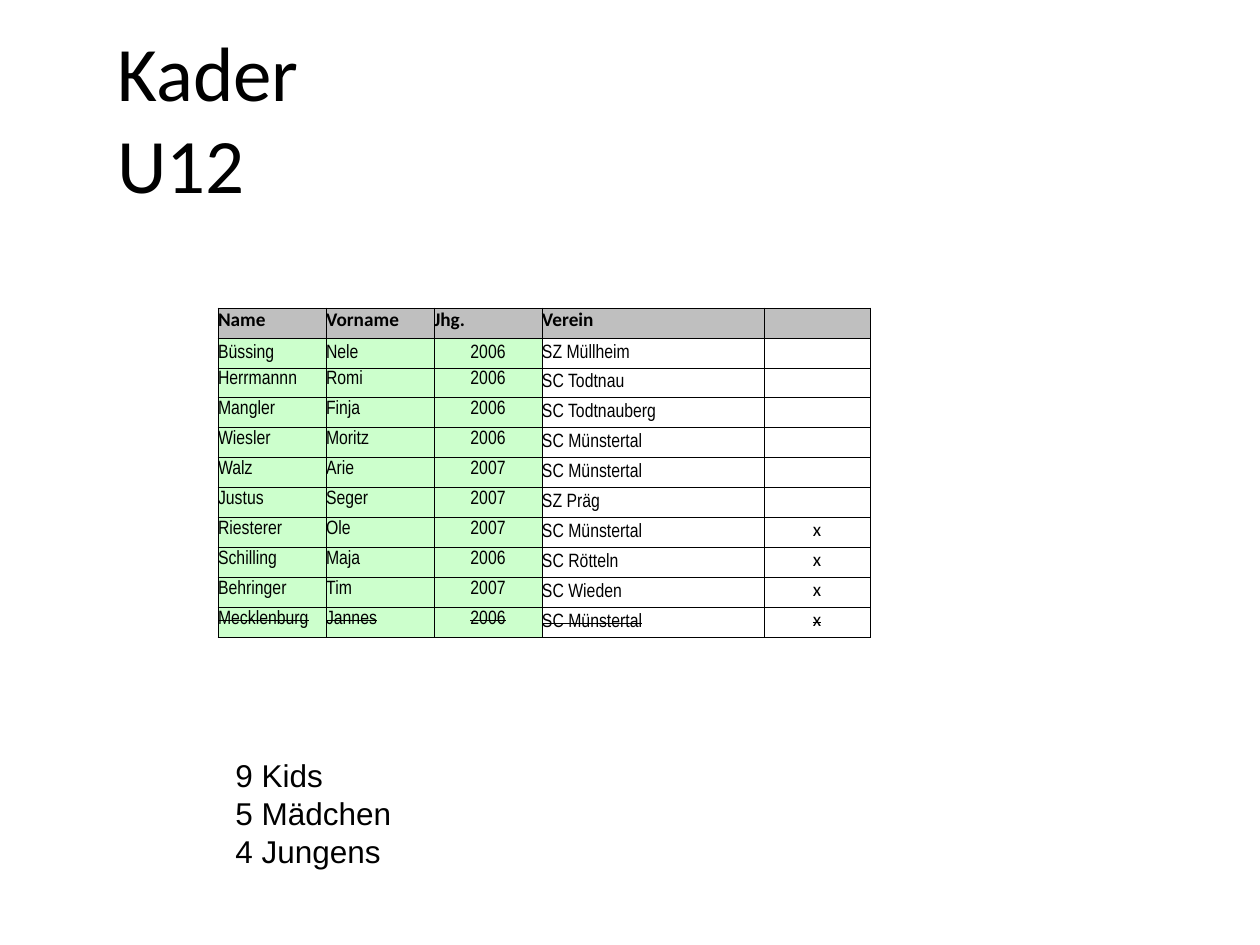
from lxml.etree import SubElement
from pptx import Presentation
from pptx.dml.color import RGBColor
from pptx.enum.text import MSO_ANCHOR, MSO_AUTO_SIZE, PP_ALIGN
from pptx.oxml.ns import qn
from pptx.util import Pt

SCALE = 914400 / 126
COLORS = {"text": "000000", "head": "BFBFBF", "mark": "CCFFCC", "plain": "FFFFFF"}

HEAD = ("Name", "Vorname", "Jhg.", "Verein", "")
SQUAD = [
    ("Büssing", "Nele", "2006", "SZ Müllheim", ""),
    ("Herrmannn", "Romi", "2006", "SC Todtnau", ""),
    ("Mangler", "Finja", "2006", "SC Todtnauberg", ""),
    ("Wiesler", "Moritz", "2006", "SC Münstertal", ""),
    ("Walz", "Arie", "2007", "SC Münstertal", ""),
    ("Justus", "Seger", "2007", "SZ Präg", ""),
    ("Riesterer", "Ole", "2007", "SC Münstertal", "x"),
    ("Schilling", "Maja", "2006", "SC Rötteln", "x"),
    ("Behringer", "Tim", "2007", "SC Wieden", "x"),
    ("Mecklenburg", "Jannes", "2006", "SC Münstertal", "x"),
]
WIDTHS = (108, 108, 108, 222, 106)
ROW = 30


def px(n):
    return round(n * SCALE)


def color(key):
    return RGBColor.from_string(COLORS[key])


class Deck:
    def __init__(self):
        self.prs = Presentation()
        self.prs.slide_width, self.prs.slide_height = px(1260), px(945)
        self.slide = self.prs.slides.add_slide(self.prs.slide_layouts[5])

    def style(self, para, size, face, bold=False, align=PP_ALIGN.LEFT):
        para.alignment = align
        font = para.font
        font.size, font.name, font.bold = Pt(size), face, bold
        font.color.rgb = color("text")

    def title(self, lines, x, y, w, h):
        shape = self.slide.shapes.title
        shape.left, shape.top, shape.width, shape.height = map(px, (x, y, w, h))
        frame = shape.text_frame
        frame.auto_size = MSO_AUTO_SIZE.NONE
        frame.vertical_anchor = MSO_ANCHOR.MIDDLE
        para = frame.paragraphs[0]
        for i, line in enumerate(lines):
            if i:
                para.add_line_break()
            para.add_run().text = line
        self.style(para, 44, "Calibri")

    def text(self, lines, x, y, w, h):
        box = self.slide.shapes.add_textbox(*map(px, (x, y, w, h)))
        frame = box.text_frame
        frame.word_wrap = False
        frame.auto_size = MSO_AUTO_SIZE.SHAPE_TO_FIT_TEXT
        frame.text = "\n".join(lines)
        for para in frame.paragraphs:
            self.style(para, 18, "Arial")

    def border(self, cell):
        props = cell._tc.get_or_add_tcPr()
        for side in ("a:lnL", "a:lnR", "a:lnT", "a:lnB"):
            line = SubElement(props, qn(side), w=str(Pt(0.5)))
            fill = SubElement(line, qn("a:solidFill"))
            SubElement(fill, qn("a:srgbClr"), val=COLORS["text"])

    def cell(self, cell, text, fill, anchor, face, bold, align, strike):
        self.border(cell)
        cell.fill.solid()
        cell.fill.fore_color.rgb = color(fill)
        cell.margin_left = cell.margin_top = cell.margin_right = 0
        cell.margin_bottom = px(6)
        cell.vertical_anchor = anchor
        para = cell.text_frame.paragraphs[0]
        if text:
            run = para.add_run()
            run.text = text
            if strike:
                run._r.get_or_add_rPr().set("strike", "sngStrike")
        else:
            # Keeps an empty cell from stretching its row
            SubElement(para._p, qn("a:endParaRPr"), sz="1100")
        self.style(para, 11, face, bold, align)

    def table(self, rows, x, y):
        shape = self.slide.shapes.add_table(
            len(rows), len(WIDTHS), px(x), px(y), px(sum(WIDTHS)), px(ROW * len(rows)))
        table = shape.table
        table.first_row = table.horz_banding = False
        for col, width in zip(table.columns, WIDTHS):
            col.width = px(width)
        for r, values in enumerate(rows):
            table.rows[r].height = px(ROW)
            for c, value in enumerate(values):
                head = r == 0
                fill = "head" if head else "mark" if c < 3 else "plain"
                middle = r > 1 and c < 3
                self.cell(
                    table.cell(r, c), value, fill,
                    MSO_ANCHOR.MIDDLE if middle else MSO_ANCHOR.BOTTOM,
                    "Calibri" if head or c == 4 else "Arial Narrow", head,
                    PP_ALIGN.CENTER if not head and c in (2, 4) else PP_ALIGN.LEFT,
                    r == len(rows) - 1)


def main():
    deck = Deck()
    # Heading
    deck.title(("Kader", "U12"), 105, 38, 1113, 158)
    # Head count
    deck.text(("9 Kids", "5 Mädchen", "4 Jungens"), 223, 750, 183, 165)
    # Squad list, last player struck out
    deck.table([HEAD] + SQUAD, 218, 308)
    deck.prs.save("out.pptx")


if __name__ == "__main__":
    main()
